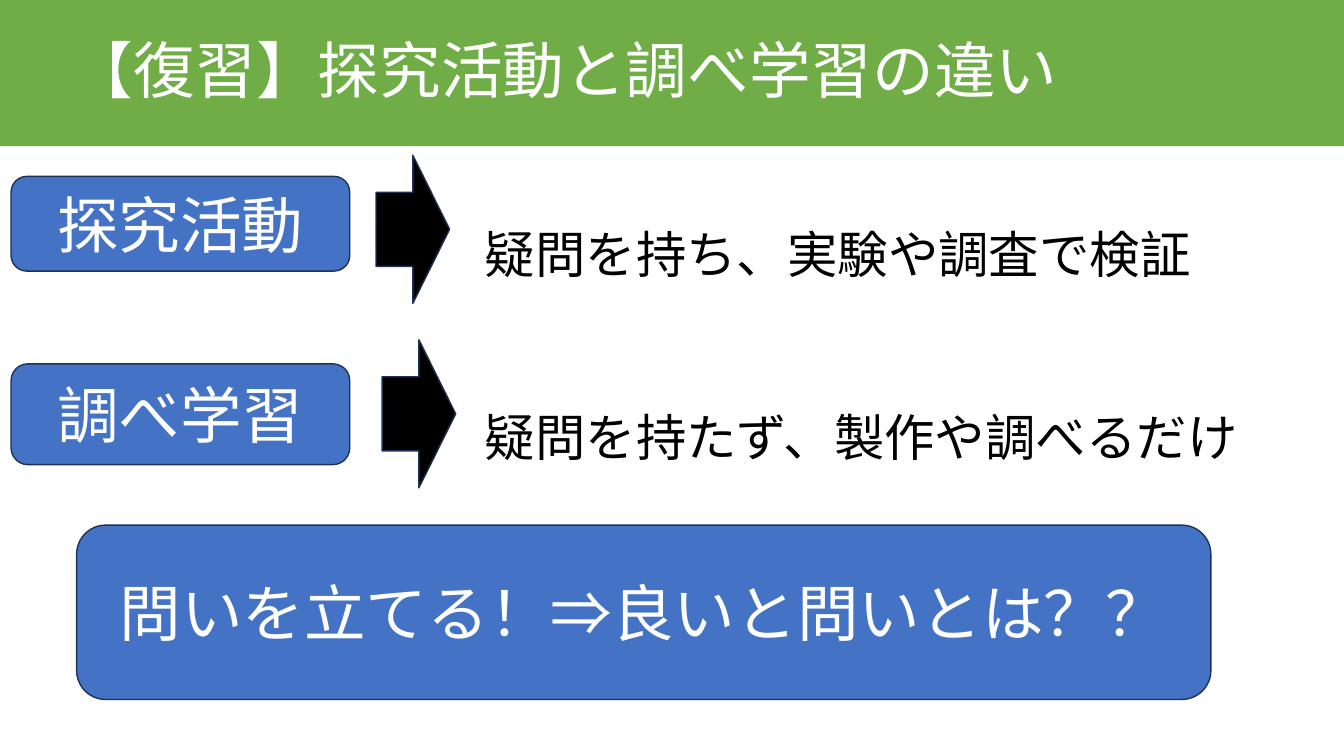
import dataclasses

import lxml.etree
import pptx
import pptx.dml.color
import pptx.enum.shapes
import pptx.enum.text
import pptx.oxml.ns
import pptx.util

EMU_PER_PX = 9144  # 100 px to the inch
SLIDE_WIDTH, SLIDE_HEIGHT = 1333, 750
SHAPES = pptx.enum.shapes.MSO_SHAPE
ALIGN = pptx.enum.text.PP_ALIGN


@dataclasses.dataclass(frozen=True)
class Theme:
    font: str = "Noto Sans CJK JP"
    green: str = "70AD47"
    blue: str = "4472C4"
    outline: str = "1E3256"
    black: str = "000000"
    white: str = "FFFFFF"
    heading_size: int = 44
    body_size: int = 36
    line_width: int = 1


THEME = Theme()


def px(length):
    return pptx.util.Emu(length * EMU_PER_PX)


def rgb(color):
    return pptx.dml.color.RGBColor.from_string(color)


def add_preset(slide, kind, box, fill, outline=None):
    shape = slide.shapes.add_shape(kind, *map(px, box))
    shape.shadow.inherit = False
    shape.fill.solid()
    shape.fill.fore_color.rgb = rgb(fill)
    if outline:
        shape.line.color.rgb = rgb(outline)
        shape.line.width = pptx.util.Pt(THEME.line_width)
    else:
        shape.line.fill.background()
    return shape


def write_text(shape, text, size, color, align, spacing=1.0):
    shape.text_frame.word_wrap = True
    paragraph = shape.text_frame.paragraphs[0]
    paragraph.text = text
    paragraph.alignment = align
    paragraph.line_spacing = spacing
    paragraph.font.name = THEME.font
    paragraph.font.size = pptx.util.Pt(size)
    paragraph.font.color.rgb = rgb(color)
    # Japanese glyphs take the East Asian typeface
    qn = pptx.oxml.ns.qn
    defaults = paragraph._p.pPr.find(qn("a:defRPr"))
    lxml.etree.SubElement(defaults, qn("a:ea"), typeface=THEME.font)


def add_title_band(slide, box, text, indent):
    band = add_preset(slide, SHAPES.RECTANGLE, box, THEME.green)
    band.text_frame.margin_left = px(indent)
    band.text_frame.vertical_anchor = pptx.enum.text.MSO_ANCHOR.MIDDLE
    write_text(band, text, THEME.heading_size, THEME.white, ALIGN.LEFT, 0.9)


def add_label(slide, box, text):
    label = add_preset(slide, SHAPES.ROUNDED_RECTANGLE, box, THEME.blue, THEME.outline)
    label.text_frame.vertical_anchor = pptx.enum.text.MSO_ANCHOR.MIDDLE
    write_text(label, text, THEME.heading_size, THEME.white, ALIGN.CENTER)


def add_comparison(slide, box, term, meaning, arrow_offset, text_offset, text_width):
    left, top, width, height = box
    # Term
    add_label(slide, box, term)

    # Arrow pointing from the term to its meaning
    arrow_left, arrow_top = arrow_offset
    arrow_box = (left + arrow_left, top + arrow_top, 147, 73)
    arrow = add_preset(slide, SHAPES.DOWN_ARROW, arrow_box, THEME.black, THEME.outline)
    arrow.rotation = 270

    # Meaning
    text_box = (left + 460, top + text_offset, text_width, 86)
    description = slide.shapes.add_textbox(*map(px, text_box))
    write_text(description, meaning, THEME.body_size, THEME.black, ALIGN.LEFT, 1.5)
    description.text_frame.auto_size = pptx.enum.text.MSO_AUTO_SIZE.SHAPE_TO_FIT_TEXT


def main():
    presentation = pptx.Presentation()
    presentation.slide_width = px(SLIDE_WIDTH)
    presentation.slide_height = px(SLIDE_HEIGHT)
    slide = presentation.slides.add_slide(presentation.slide_layouts[6])

    add_title_band(slide, (0, 0, SLIDE_WIDTH, 145), "【復習】探究活動と調べ学習の違い", indent=71)
    add_comparison(slide, (11, 175, 336, 94), "探究活動", "疑問を持ち、実験や調査で検証",
                   arrow_offset=(325, 16), text_offset=11, text_width=748)
    add_comparison(slide, (11, 361, 336, 100), "調べ学習", "疑問を持たず、製作や調べるだけ",
                   arrow_offset=(331, 13), text_offset=7, text_width=815)
    # Closing question
    add_label(slide, (76, 521, 1125, 173), "問いを立てる！⇒良いと問いとは？？")

    presentation.save("out.pptx")


if __name__ == "__main__":
    main()
